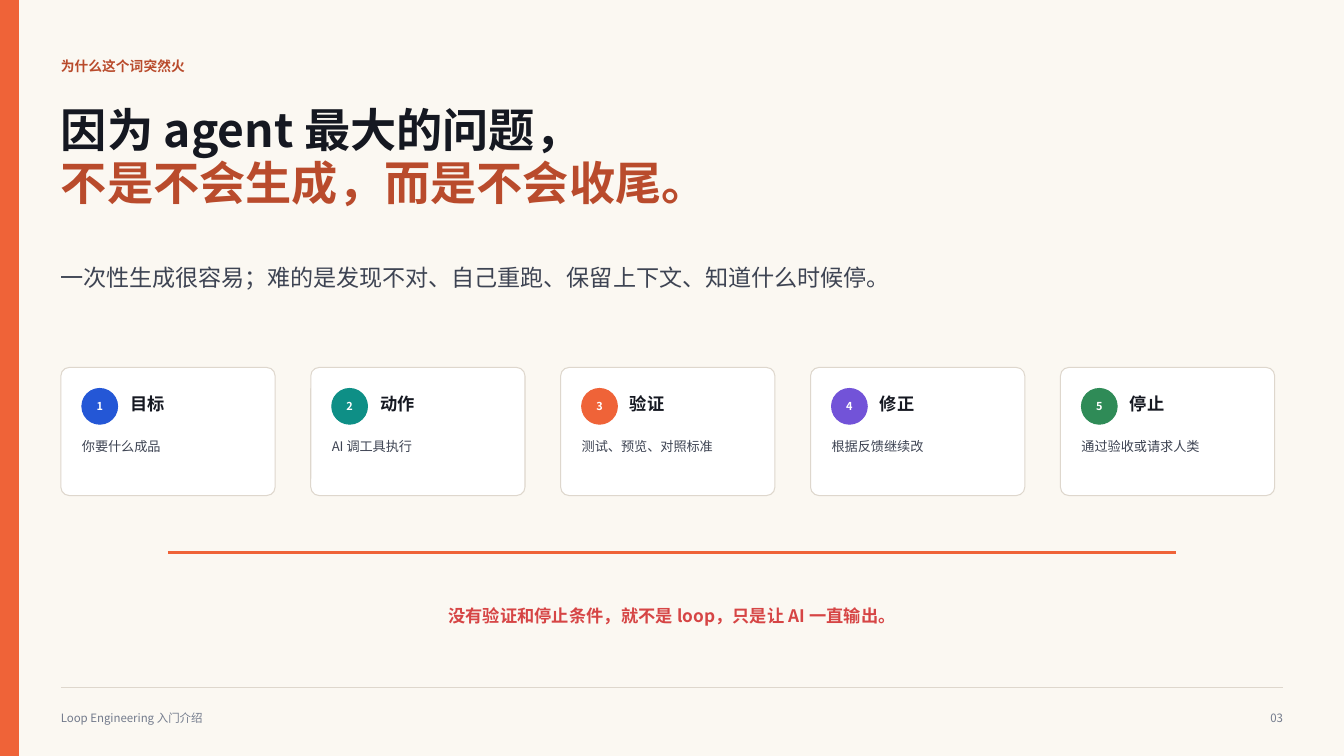
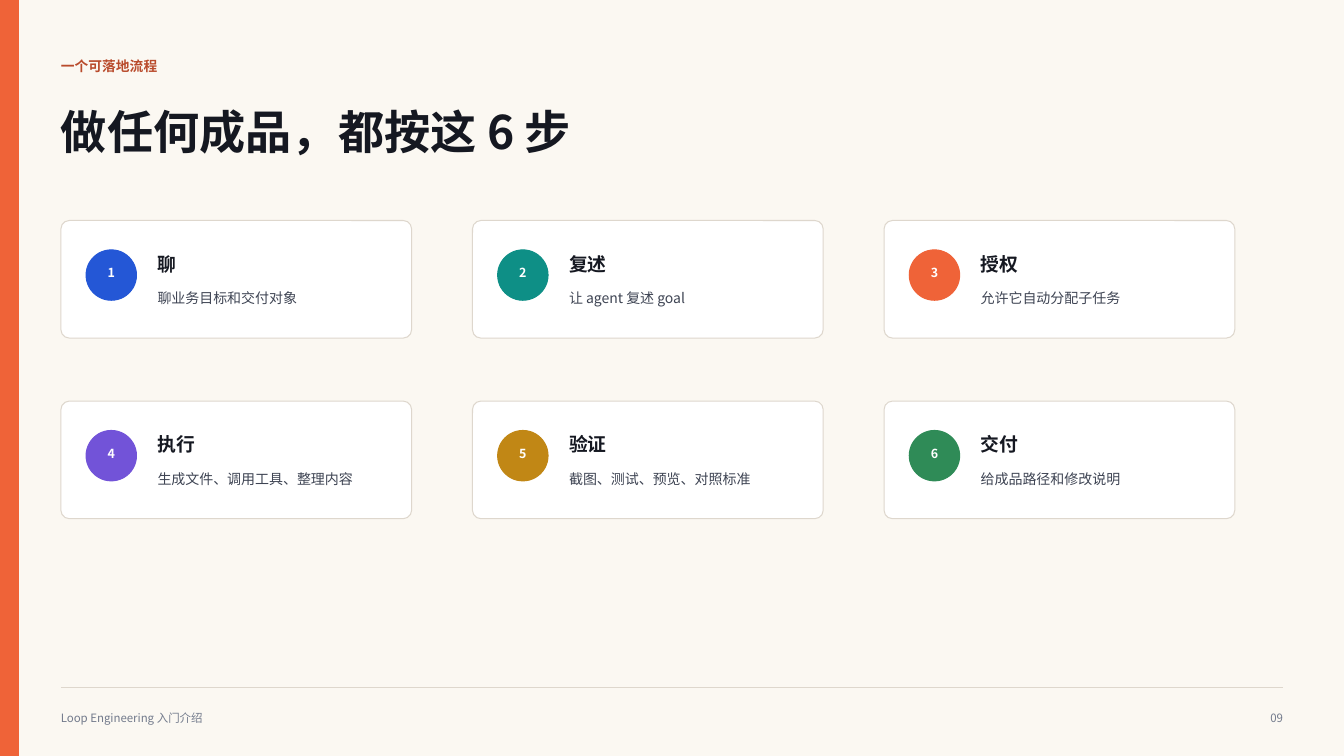
from collections import namedtuple

from lxml import etree
from pptx import Presentation
from pptx.dml.color import RGBColor
from pptx.enum import shapes, text
from pptx.oxml import ns
from pptx.util import Pt

FONT = "Noto Sans CJK SC"
PAPER = RGBColor(0xFB, 0xF8, 0xF2)
WHITE = RGBColor(0xFF, 0xFF, 0xFF)
INK = RGBColor(0x15, 0x18, 0x21)
BODY = RGBColor(0x3E, 0x44, 0x53)
MUTED = RGBColor(0x73, 0x7B, 0x8C)
RULE = RGBColor(0xDE, 0xD7, 0xCD)
RUST = RGBColor(0xB9, 0x4B, 0x2C)
RED = RGBColor(0xD6, 0x45, 0x45)
ORANGE = RGBColor(0xEF, 0x63, 0x38)
BLUE = RGBColor(0x24, 0x57, 0xD6)
TEAL = RGBColor(0x0E, 0x8F, 0x86)
PURPLE = RGBColor(0x72, 0x53, 0xD8)
GOLD = RGBColor(0xC1, 0x87, 0x15)
GREEN = RGBColor(0x2F, 0x8B, 0x57)

LEFT, ALIGN = text.PP_ALIGN.LEFT, text.PP_ALIGN
SLIDE_W, SLIDE_H = 960, 540
MARGIN, CONTENT_W = 43.5, 873
RIGHT = MARGIN + CONTENT_W
CORNER = 6

Box = namedtuple("Box", "x y w h")
# Boxes are relative to the card; lift is the bottom inset that raises the number.
CardStyle = namedtuple(
    "CardStyle", "badge heading detail number_size heading_size detail_size lift")
COMPACT = CardStyle(Box(15, 15, 25.5, 25.5), Box(49.5, 16.5, 88.5, 16.5),
                    Box(15, 49.5, 123, 25.5), 7.8, 12.3, 9.4, 0)
WIDE = CardStyle(Box(18, 21, 36, 36), Box(69, 21, 75, 18),
                 Box(69, 48, 148.5, 13.5), 8.9, 13.4, 10, 3)


def points(box):
    return [Pt(length) for length in box]


def within(outer, inner):
    return Box(outer.x + inner.x, outer.y + inner.y, inner.w, inner.h)


def write(frame, lines, size, bold=False, align=LEFT, spacing=1.12,
          anchor=text.MSO_ANCHOR.TOP):
    """Fill a text frame with (wording, colour) pairs, one paragraph each."""
    frame.word_wrap = True
    frame.auto_size = text.MSO_AUTO_SIZE.NONE
    frame.vertical_anchor = anchor
    frame.margin_left = frame.margin_right = 0
    frame.margin_top = frame.margin_bottom = 0
    for index, (wording, color) in enumerate(lines):
        paragraph = frame.add_paragraph() if index else frame.paragraphs[0]
        paragraph.alignment = align
        paragraph.line_spacing = spacing
        paragraph.space_before = Pt(0)
        run = paragraph.add_run()
        run.text = wording
        run.font.size = Pt(size)
        run.font.bold = bold
        run.font.color.rgb = color
        run.font.name = FONT
        east_asian = etree.SubElement(run._r.get_or_add_rPr(), ns.qn("a:ea"))
        east_asian.set("typeface", FONT)


def add_label(slide, box, wording, size, color, **style):
    label = slide.shapes.add_textbox(*points(box))
    write(label.text_frame, [(wording, color)], size, **style)


def add_panel(slide, kind, box, fill, line):
    panel = slide.shapes.add_shape(kind, *points(box))
    panel.shadow.inherit = False
    panel.fill.solid()
    panel.fill.fore_color.rgb = fill
    panel.line.color.rgb = line
    panel.line.width = Pt(0.75)
    return panel


def add_rule(slide, start, end, y, color, width):
    rule = slide.shapes.add_connector(
        shapes.MSO_CONNECTOR.STRAIGHT, Pt(start), Pt(y), Pt(end), Pt(y))
    rule.line.color.rgb = color
    rule.line.width = Pt(width)
    etree.SubElement(rule._element.spPr, ns.qn("a:effectLst"))


def add_card(slide, box, style, number, heading, detail, accent):
    card = add_panel(slide, shapes.MSO_SHAPE.ROUNDED_RECTANGLE, box, WHITE, RULE)
    card.adjustments[0] = CORNER / min(box.w, box.h)
    badge = add_panel(slide, shapes.MSO_SHAPE.OVAL, within(box, style.badge),
                      accent, accent)
    write(badge.text_frame, [(str(number), WHITE)], style.number_size, bold=True,
          align=ALIGN.CENTER, spacing=1, anchor=text.MSO_ANCHOR.MIDDLE)
    badge.text_frame.margin_bottom = Pt(style.lift)
    add_label(slide, within(box, style.heading), heading, style.heading_size, INK,
              bold=True)
    add_label(slide, within(box, style.detail), detail, style.detail_size, BODY)


def add_card_grid(slide, first, style, columns, pitch_x, pitch_y, steps):
    """Lay out numbered cards row by row, starting from the first card's box."""
    for index, step in enumerate(steps):
        row, column = divmod(index, columns)
        box = first._replace(x=first.x + column * pitch_x,
                             y=first.y + row * pitch_y)
        add_card(slide, box, style, index + 1, *step)


def add_framed_slide(deck, page, eyebrow, title_lines, title_box):
    """Add a slide with the side band, footer, eyebrow and title."""
    slide = deck.slides.add_slide(deck.slide_layouts[5])
    add_panel(slide, shapes.MSO_SHAPE.RECTANGLE, Box(0, 0, 13.5, SLIDE_H),
              ORANGE, ORANGE)
    add_rule(slide, MARGIN, RIGHT, 491, RULE, 0.75)
    add_label(slide, Box(MARGIN, 507, 390, 18), "Loop Engineering 入门介绍", 8.2,
              MUTED, spacing=1.08)
    add_label(slide, Box(RIGHT - 36, 507, 36, 18), page, 8.2, MUTED,
              align=ALIGN.RIGHT, spacing=1.08)
    add_label(slide, Box(MARGIN, 40.5, 645, 18), eyebrow, 9.8, RUST, bold=True,
              spacing=1.08)
    title = slide.shapes.title
    title.left, title.top, title.width, title.height = points(title_box)
    write(title.text_frame, title_lines, 33, bold=True, spacing=0.96)
    return slide


def build_reason_slide(deck):
    slide = add_framed_slide(
        deck, "03", "为什么这个词突然火",
        [("因为 agent 最大的问题，", INK), ("不是不会生成，而是不会收尾。", RUST)],
        Box(MARGIN, 75, 645, 90))
    add_label(slide, Box(MARGIN, 186, 675, 31.5),
              "一次性生成很容易；难的是发现不对、自己重跑、保留上下文、知道什么时候停。",
              16.5, BODY)
    add_card_grid(slide, Box(MARGIN, 262.5, 153, 91.5), COMPACT, 5, 178.5, 0, [
        ("目标", "你要什么成品", BLUE),
        ("动作", "AI 调工具执行", TEAL),
        ("验证", "测试、预览、对照标准", ORANGE),
        ("修正", "根据反馈继续改", PURPLE),
        ("停止", "通过验收或请求人类", GREEN),
    ])
    add_rule(slide, 120, SLIDE_W - 120, 394.5, ORANGE, 2.25)
    add_label(slide, Box(MARGIN, 430.5, CONTENT_W, 16.5),
              "没有验证和停止条件，就不是 loop，只是让 AI 一直输出。", 12.3, RED,
              bold=True, align=ALIGN.CENTER)


def build_process_slide(deck):
    slide = add_framed_slide(
        deck, "09", "一个可落地流程", [("做任何成品，都按这 6 步", INK)],
        Box(MARGIN, 76.5, 615, 42))
    add_card_grid(slide, Box(MARGIN, 157.5, 250.5, 84), WIDE, 3, 294, 129, [
        ("聊", "聊业务目标和交付对象", BLUE),
        ("复述", "让 agent 复述 goal", TEAL),
        ("授权", "允许它自动分配子任务", ORANGE),
        ("执行", "生成文件、调用工具、整理内容", PURPLE),
        ("验证", "截图、测试、预览、对照标准", GOLD),
        ("交付", "给成品路径和修改说明", GREEN),
    ])


def main():
    deck = Presentation()
    deck.slide_width, deck.slide_height = Pt(SLIDE_W), Pt(SLIDE_H)
    background = deck.slide_master.background.fill
    background.solid()
    background.fore_color.rgb = PAPER
    build_reason_slide(deck)
    build_process_slide(deck)
    deck.save("out.pptx")


if __name__ == "__main__":
    main()
